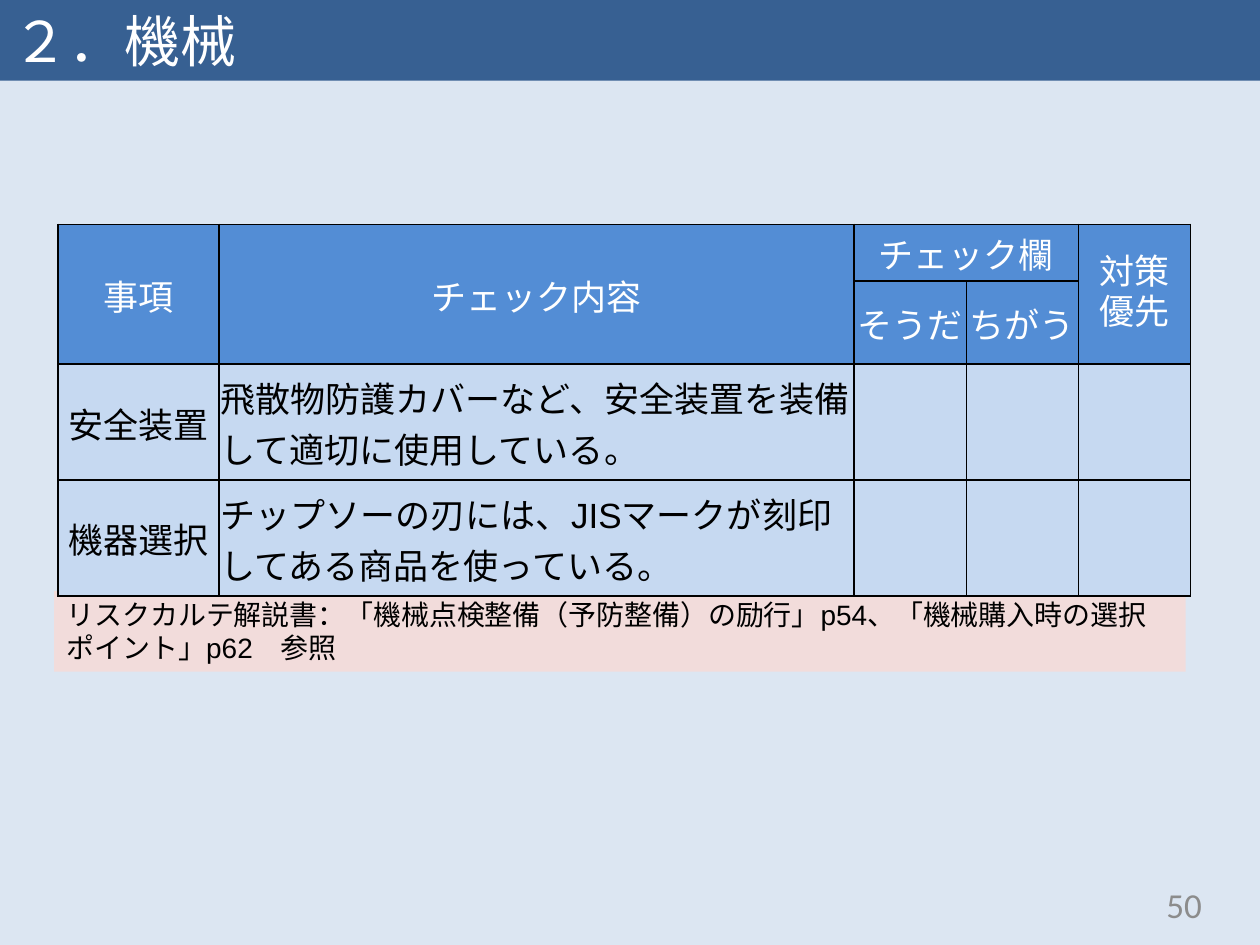
"""Build the machinery safety checklist slide."""
from lxml.etree import SubElement
from pptx import Presentation
from pptx.dml.color import RGBColor
from pptx.enum.shapes import MSO_SHAPE
from pptx.enum.text import MSO_ANCHOR, PP_ALIGN
from pptx.oxml import parse_xml
from pptx.oxml.ns import nsdecls, qn
from pptx.util import Inches, Pt

THEME = {
    "background": "DCE6F2", "banner": "376092", "note": "F2DCDB",
    "header": "538DD5", "body": "C6D9F1", "border": "000000",
    "stacked_spacing": 23,
    "styles": {
        "title": {"size": 32, "name": "Noto Sans CJK JP", "color": "FFFFFF", "asian": "Noto Sans CJK JP"},
        "note": {"size": 16, "name": "Arial", "color": "000000", "asian": "Calibri"},
        "header": {"size": 20, "name": "Noto Sans CJK JP", "color": "FFFFFF", "asian": "Noto Sans CJK JP"},
        "body": {"size": 20, "name": "Arial", "color": "000000", "asian": "Noto Sans CJK JP"},
        "number": {"size": 20, "name": "Calibri", "color": "8C8C8C", "asian": "Calibri"},
    },
}
TITLE = "２．機械"
NOTE = "リスクカルテ解説書：「機械点検整備（予防整備）の励行」p54、「機械購入時の選択ポイント」p62　参照"
PAGE_NUMBER = "50"
ROWS = [
    ["事項", "チェック内容", "チェック欄", "", "対策\n優先"],
    ["", "", "そうだ", "ちがう", ""],
    ["安全装置", "飛散物防護カバーなど、安全装置を装備して適切に使用している。", "", "", ""],
    ["機器選択", "チップソーの刃には、JISマークが刻印してある商品を使っている。", "", "", ""],
]
MERGES = [((0, 0), (1, 0)), ((0, 1), (1, 1)), ((0, 2), (0, 3)), ((0, 4), (1, 4))]
COLUMN_WIDTHS = [1.28, 5.04, 0.89, 0.89, 0.89]
ROW_HEIGHTS = [0.45, 0.66, 0.92, 0.92]
HEADER_ROWS = 2
CONTENT_COLUMN = 1
CELL_FORMAT = {
    "vertical_anchor": MSO_ANCHOR.MIDDLE, "margin_left": Inches(0.01),
    "margin_right": Inches(0.01), "margin_top": Inches(0.01), "margin_bottom": 0,
}


def set_attributes(target, values):
    for name, value in values.items():
        setattr(target, name, value)


def paint(fill, color):
    fill.solid()
    fill.fore_color.rgb = RGBColor.from_string(color)


def write(text_frame, text, style_name, alignment=PP_ALIGN.LEFT):
    style = THEME["styles"][style_name]
    text_frame.text = text
    stacked = len(text_frame.paragraphs) > 1
    for paragraph in text_frame.paragraphs:
        paragraph.alignment = alignment
        if stacked:
            paragraph.line_spacing = Pt(THEME["stacked_spacing"])
        for run in paragraph.runs:
            set_attributes(run.font, {"size": Pt(style["size"]), "name": style["name"]})
            run.font.color.rgb = RGBColor.from_string(style["color"])
            SubElement(run.font._element, qn("a:ea")).set("typeface", style["asian"])


def add_panel(slide, box, color, text, style_name, anchor):
    shape = slide.shapes.add_shape(MSO_SHAPE.RECTANGLE, *map(Inches, box))
    shape.shadow.inherit = False
    shape.line.fill.background()
    paint(shape.fill, color)
    set_attributes(shape.text_frame, {"word_wrap": True, "vertical_anchor": anchor})
    write(shape.text_frame, text, style_name)


def add_borders(cell):
    properties = cell._tc.get_or_add_tcPr()
    for position, side in enumerate(("lnL", "lnR", "lnT", "lnB")):
        properties.insert(position, parse_xml(
            f'<a:{side} {nsdecls("a")} w="{Pt(1)}"><a:solidFill>'
            f'<a:srgbClr val="{THEME["border"]}"/></a:solidFill></a:{side}>'))


def add_checklist(slide):
    table = slide.shapes.add_table(
        len(ROWS), len(COLUMN_WIDTHS), Inches(0.46), Inches(1.78),
        Inches(sum(COLUMN_WIDTHS)), Inches(sum(ROW_HEIGHTS))).table
    for column, width in zip(table.columns, COLUMN_WIDTHS):
        column.width = Inches(width)
    for row, height in zip(table.rows, ROW_HEIGHTS):
        row.height = Inches(height)
    for start, end in MERGES:
        table.cell(*start).merge(table.cell(*end))
    for row_index, row in enumerate(ROWS):
        kind = "header" if row_index < HEADER_ROWS else "body"
        for column_index, text in enumerate(row):
            cell = table.cell(row_index, column_index)
            set_attributes(cell, CELL_FORMAT)
            paint(cell.fill, THEME[kind])
            add_borders(cell)
            if text:
                is_content = kind == "body" and column_index == CONTENT_COLUMN
                write(cell.text_frame, text, kind, PP_ALIGN.LEFT if is_content else PP_ALIGN.CENTER)


def main():
    presentation = Presentation()
    set_attributes(presentation, {"slide_width": Inches(10), "slide_height": Inches(7.5)})
    slide = presentation.slides.add_slide(presentation.slide_layouts[6])
    paint(slide.background.fill, THEME["background"])
    add_panel(slide, (0, 0, 10, 0.64), THEME["banner"], TITLE, "title", MSO_ANCHOR.MIDDLE)
    add_panel(slide, (0.43, 4.69, 8.98, 0.64), THEME["note"], NOTE, "note", MSO_ANCHOR.TOP)
    add_checklist(slide)
    number = slide.shapes.add_textbox(*map(Inches, (9.16, 6.98, 0.6, 0.4))).text_frame
    set_attributes(number, {"word_wrap": True, "vertical_anchor": MSO_ANCHOR.MIDDLE})
    write(number, PAGE_NUMBER, "number")
    presentation.save("out.pptx")


if __name__ == "__main__":
    main()
